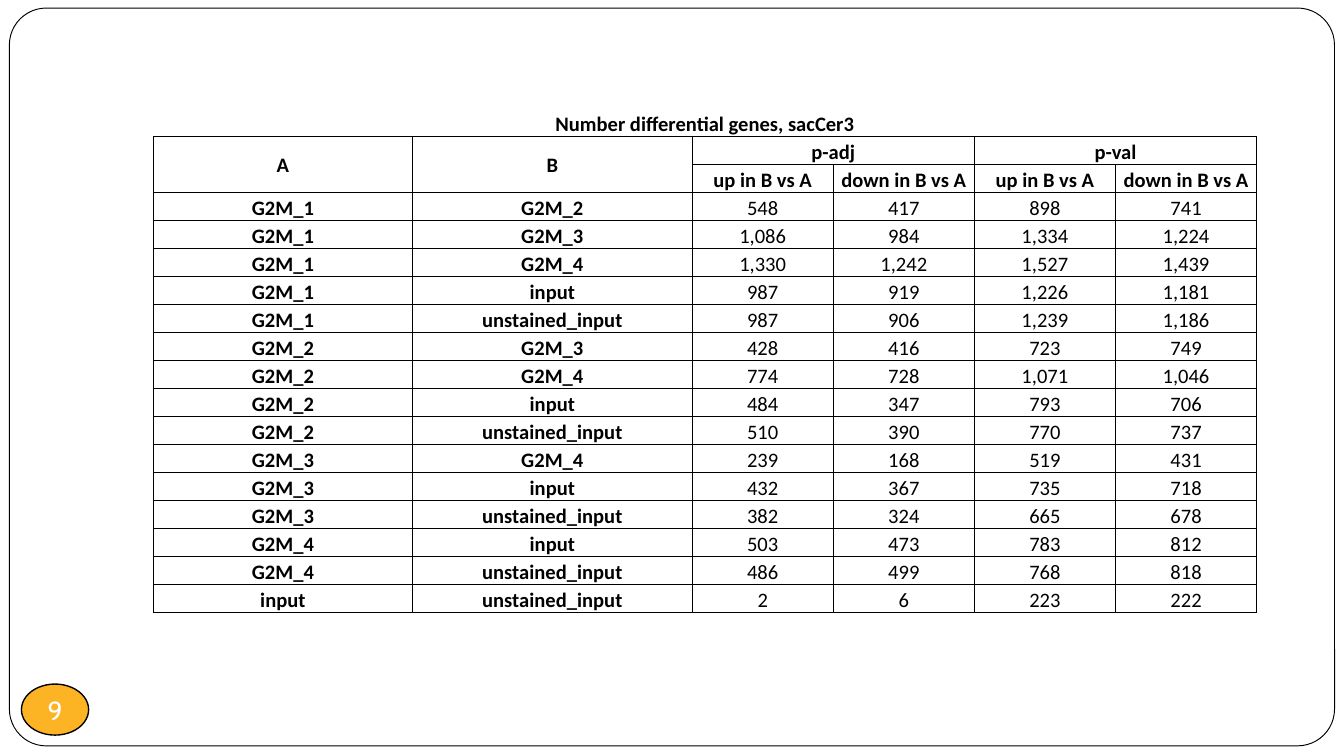
import itertools
from dataclasses import dataclass

import pptx
import pptx.util
from lxml import etree
from pptx.dml.color import RGBColor
from pptx.enum.shapes import MSO_SHAPE
from pptx.enum.text import MSO_ANCHOR, PP_ALIGN
from pptx.oxml.ns import qn
from pptx.util import Inches, Pt


@dataclass(frozen=True)
class Theme:
    ink: RGBColor = RGBColor(0, 0, 0)
    paper: RGBColor = RGBColor(255, 255, 255)
    accent: RGBColor = RGBColor(0xFC, 0xB4, 0x24)
    body: str = "Calibri"
    badge: str = "Cabin"
    small: int = 11
    large: int = 14
    rule: float = 0.5


THEME = Theme()
WIDTHS = [1.93, 2.08] + [1.05] * 4
SAMPLES = ["G2M_1", "G2M_2", "G2M_3", "G2M_4", "input", "unstained_input"]
COUNTS = [
    (548, 417, 898, 741),
    (1086, 984, 1334, 1224),
    (1330, 1242, 1527, 1439),
    (987, 919, 1226, 1181),
    (987, 906, 1239, 1186),
    (428, 416, 723, 749),
    (774, 728, 1071, 1046),
    (484, 347, 793, 706),
    (510, 390, 770, 737),
    (239, 168, 519, 431),
    (432, 367, 735, 718),
    (382, 324, 665, 678),
    (503, 473, 783, 812),
    (486, 499, 768, 818),
    (2, 6, 223, 222),
]
HEADS = [
    ["Number differential genes, sacCer3"] + [""] * 5,
    ["A", "B", "p-adj", "", "p-val", ""],
    ["", ""] + ["up in B vs A", "down in B vs A"] * 2,
]
# First row, first column, last row, last column
MERGES = [(0, 0, 0, 5), (1, 0, 2, 0), (1, 1, 2, 1), (1, 2, 1, 3), (1, 4, 1, 5)]


def assign(item, values):
    for name, value in values.items():
        setattr(item, name, value)


def write(frame, text, font, size, color, bold=False):
    para = frame.paragraphs[0]
    para.alignment = PP_ALIGN.CENTER
    run = para.add_run()
    run.text = text
    assign(run.font, {"name": font, "size": Pt(size), "bold": bold})
    run.font.color.rgb = color


def add_shape(slide, kind, box, fill, width):
    shape = slide.shapes.add_shape(kind, *map(Inches, box))
    shape.shadow.inherit = False
    shape.fill.solid()
    shape.fill.fore_color.rgb = fill
    shape.line.color.rgb = THEME.ink
    shape.line.width = Pt(width)
    return shape


def add_badge(slide, text):
    badge = add_shape(slide, MSO_SHAPE.OVAL, (0.16, 5.09, 0.5, 0.38),
                      THEME.accent, 0.75)
    frame = badge.text_frame
    sides = ("left", "right", "top", "bottom")
    assign(frame, {f"margin_{side}": 0 for side in sides})
    assign(frame, {"word_wrap": False, "vertical_anchor": MSO_ANCHOR.MIDDLE})
    write(frame, text, THEME.badge, THEME.large, THEME.paper)


def set_edges(cell, shown):
    """Rule the sides of a cell named in shown and clear the others."""
    props = cell._tc.get_or_add_tcPr()
    for place, side in enumerate("LRTB"):
        line = etree.Element(qn(f"a:ln{side}"), w=str(Pt(THEME.rule)))
        if side in shown:
            fill = etree.SubElement(line, qn("a:solidFill"))
            etree.SubElement(fill, qn("a:srgbClr"), val=str(THEME.ink))
        else:
            etree.SubElement(line, qn("a:noFill"))
        props.insert(place, line)


def style_cell(cell, text, row, col):
    middle = row == 1 and col < 2
    assign(cell, {
        "margin_left": Inches(0.01),
        "margin_right": Inches(0.01),
        "margin_top": Inches(0.01),
        "margin_bottom": 0,
        "vertical_anchor": MSO_ANCHOR.MIDDLE if middle else MSO_ANCHOR.BOTTOM,
    })
    cell.fill.background()
    set_edges(cell, "LRTB" if row else "B")
    if text:
        bold = row < len(HEADS) or col < 2
        write(cell.text_frame, text, THEME.body, THEME.small, THEME.ink, bold)


def add_grid(slide, rows):
    box = map(Inches, (1.14, 0.81, sum(WIDTHS), 3.75))
    table = slide.shapes.add_table(len(rows), len(WIDTHS), *box).table
    assign(table, {"first_row": False, "horz_banding": False})
    for column, width in zip(table.columns, WIDTHS):
        column.width = Inches(width)
    for top, left, bottom, right in MERGES:
        table.cell(top, left).merge(table.cell(bottom, right))
    for row, texts in enumerate(rows):
        for col, text in enumerate(texts):
            style_cell(table.cell(row, col), text, row, col)


def main():
    deck = pptx.Presentation()
    wide = Inches(10)
    assign(deck, {"slide_width": wide, "slide_height": wide * 9 // 16})
    slide = deck.slides.add_slide(deck.slide_layouts[6])
    border = add_shape(slide, MSO_SHAPE.ROUNDED_RECTANGLE,
                       (0.07, 0.06, 9.86, 5.49), THEME.paper, THEME.rule)
    border.adjustments[0] = 0.05
    add_badge(slide, "9")
    pairs = itertools.combinations(SAMPLES, 2)
    rows = [[*pair, *(f"{count:,}" for count in counts)]
            for pair, counts in zip(pairs, COUNTS)]
    add_grid(slide, HEADS + rows)
    deck.save("out.pptx")


if __name__ == "__main__":
    main()
